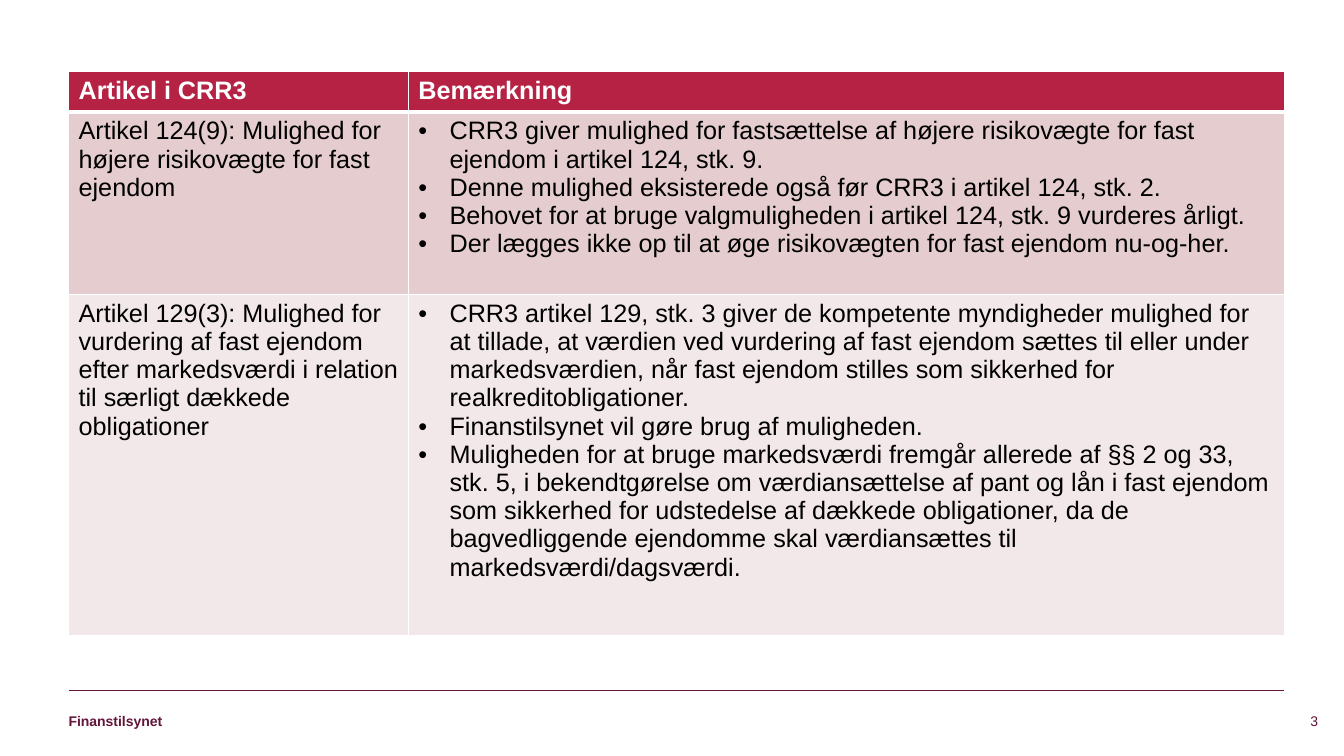
from lxml import etree
from pptx import Presentation
from pptx.dml.color import RGBColor
from pptx.enum import shapes, text
from pptx.oxml import ns
from pptx.util import Inches, Pt

WHITE = RGBColor(0xFF, 0xFF, 0xFF)
BLACK = RGBColor(0, 0, 0)
PLUM = RGBColor(0x63, 0x16, 0x3A)
CRIMSON = RGBColor(0xB5, 0x22, 0x44)
ROSE = RGBColor(0xE5, 0xCD, 0xCF)
PALE_ROSE = RGBColor(0xF3, 0xE8, 0xE9)

LEFT, RIGHT = 0.68, 12.74
COLUMN_WIDTHS = (3.37, 8.69)
ROW_HEIGHTS = (0.39, 1.81, 3.39)
ROW_FILLS = (CRIMSON, ROSE, PALE_ROSE)
HEADINGS = ("Artikel i CRR3", "Bemærkning")
ARTICLES = (
    ("Artikel 124(9): Mulighed for højere risikovægte for fast ejendom", (
        "CRR3 giver mulighed for fastsættelse af højere risikovægte for fast ejendom i artikel 124, stk. 9.",
        "Denne mulighed eksisterede også før CRR3 i artikel 124, stk. 2.",
        "Behovet for at bruge valgmuligheden i artikel 124, stk. 9 vurderes årligt.",
        "Der lægges ikke op til at øge risikovægten for fast ejendom nu-og-her.",
    )),
    ("Artikel 129(3): Mulighed for vurdering af fast ejendom efter markedsværdi "
     "i relation til særligt dækkede obligationer", (
        "CRR3 artikel 129, stk. 3 giver de kompetente myndigheder mulighed for at tillade, "
        "at værdien ved vurdering af fast ejendom sættes til eller under markedsværdien, "
        "når fast ejendom stilles som sikkerhed for realkreditobligationer.",
        "Finanstilsynet vil gøre brug af muligheden.",
        "Muligheden for at bruge markedsværdi fremgår allerede af §§ 2 og 33, stk. 5, "
        "i bekendtgørelse om værdiansættelse af pant og lån i fast ejendom som sikkerhed "
        "for udstedelse af dækkede obligationer, da de bagvedliggende ejendomme skal "
        "værdiansættes til markedsværdi/dagsværdi.",
    )),
)


def add_span(para, words, size, color, bold=False):
    span = para.add_run()
    span.text = words
    span.font.name = "Arial"
    span.font.size = Pt(size)
    span.font.bold = bold
    span.font.color.rgb = color


def add_bullet(para):
    properties = para._p.get_or_add_pPr()
    properties.set("marL", str(Inches(0.31)))
    properties.set("indent", str(-Inches(0.31)))
    font = etree.SubElement(properties, ns.qn("a:buFont"))
    font.set("typeface", "Arial")
    etree.SubElement(properties, ns.qn("a:buChar")).set("char", "•")


def add_borders(cell, bottom_width):
    properties = cell._tc.get_or_add_tcPr()
    widths = {"lnL": 1, "lnR": 1, "lnT": 1, "lnB": bottom_width}
    for index, (side, width) in enumerate(widths.items()):
        border = etree.Element(ns.qn(f"a:{side}"), w=str(Pt(width)))
        fill = etree.SubElement(border, ns.qn("a:solidFill"))
        etree.SubElement(fill, ns.qn("a:srgbClr")).set("val", str(WHITE))
        properties.insert(index, border)


def fill_cell(cell, paragraphs, row, bulleted):
    header = row == 0
    cell.fill.solid()
    cell.fill.fore_color.rgb = ROW_FILLS[row]
    add_borders(cell, 3 if header else 1)
    frame = cell.text_frame
    for index, words in enumerate(paragraphs):
        para = frame.add_paragraph() if index else frame.paragraphs[0]
        if bulleted:
            add_bullet(para)
        add_span(para, words, 18, WHITE if header else BLACK, header)


def add_article_table(page):
    rows = [[(heading,) for heading in HEADINGS]]
    rows += [[(article,), remarks] for article, remarks in ARTICLES]
    table = page.shapes.add_table(
        len(rows), len(HEADINGS), Inches(LEFT), Inches(0.71),
        Inches(sum(COLUMN_WIDTHS)), Inches(sum(ROW_HEIGHTS))).table
    for column, width in zip(table.columns, COLUMN_WIDTHS):
        column.width = Inches(width)
    for row, contents in enumerate(rows):
        table.rows[row].height = Inches(ROW_HEIGHTS[row])
        for column, paragraphs in enumerate(contents):
            fill_cell(table.cell(row, column), paragraphs, row, row > 0 and column == 1)


def add_footer_rule(page):
    rule = page.shapes.add_connector(
        shapes.MSO_CONNECTOR.STRAIGHT,
        Inches(LEFT), Inches(6.85), Inches(RIGHT), Inches(6.85))
    rule.line.color.rgb = PLUM
    rule.line.width = Pt(1.25)
    etree.SubElement(rule._element.spPr, ns.qn("a:effectLst"))


def add_footer_text(page, left, width, words, align, bold):
    box = page.shapes.add_textbox(Inches(left), Inches(7.04), Inches(width), Inches(0.2))
    frame = box.text_frame
    frame.word_wrap = True
    frame.vertical_anchor = text.MSO_ANCHOR.BOTTOM
    frame.margin_left = frame.margin_right = frame.margin_top = frame.margin_bottom = 0
    para = frame.paragraphs[0]
    para.alignment = align
    add_span(para, words, 10, PLUM, bold)


def main():
    deck = Presentation()
    deck.slide_width, deck.slide_height = Inches(13.33), Inches(7.5)
    page = deck.slides.add_slide(deck.slide_layouts[6])
    add_footer_rule(page)
    add_footer_text(page, LEFT, 2.76, "Finanstilsynet", text.PP_ALIGN.LEFT, True)
    add_footer_text(page, RIGHT, 0.59, "3", text.PP_ALIGN.CENTER, False)
    add_article_table(page)
    deck.save("out.pptx")


if __name__ == "__main__":
    main()
